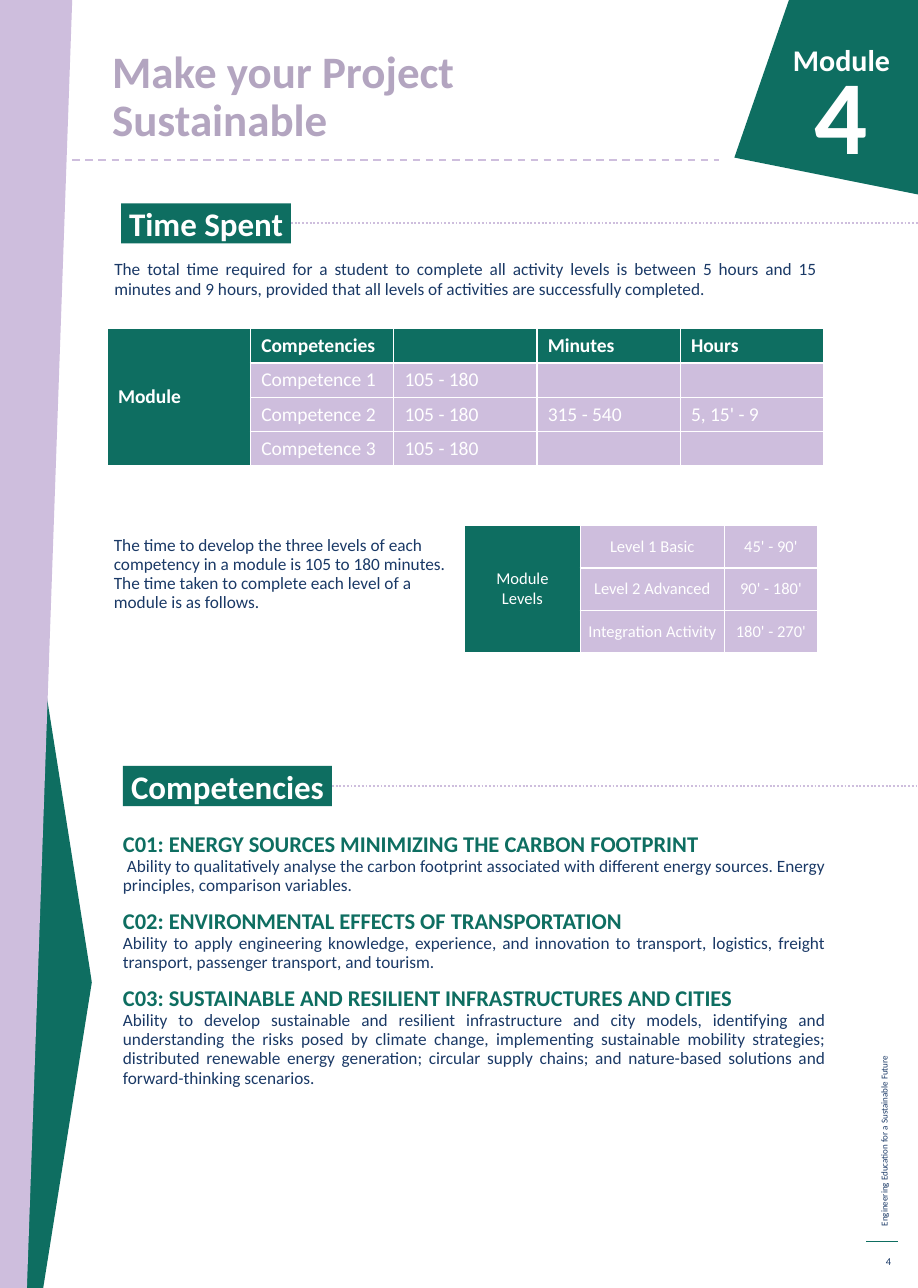
from lxml import etree
from pptx import Presentation
from pptx.dml.color import RGBColor
from pptx.enum.dml import MSO_LINE
from pptx.enum.shapes import MSO_CONNECTOR, MSO_SHAPE
from pptx.enum.text import MSO_ANCHOR, PP_ALIGN
from pptx.oxml.ns import qn
from pptx.util import Pt

GREEN = RGBColor(0x0E, 0x6E, 0x61)
LILAC = RGBColor(0xCE, 0xBE, 0xDD)
MAUVE = RGBColor(0xB3, 0xA5, 0xC0)
NAVY = RGBColor(0x1A, 0x39, 0x66)
WHITE = RGBColor(0xFF, 0xFF, 0xFF)

LEFT, CENTER, RIGHT, JUSTIFY = PP_ALIGN.LEFT, PP_ALIGN.CENTER, PP_ALIGN.RIGHT, PP_ALIGN.JUSTIFY
TOP, MIDDLE, BOTTOM = MSO_ANCHOR.TOP, MSO_ANCHOR.MIDDLE, MSO_ANCHOR.BOTTOM
STRAIGHT, RECTANGLE = MSO_CONNECTOR.STRAIGHT, MSO_SHAPE.RECTANGLE
DASH, DOT, SOLID = MSO_LINE.DASH, MSO_LINE.ROUND_DOT, MSO_LINE.SOLID

FONT = "Calibri"
BODY_SIZE = 11.5
BODY_SPACING = Pt(12.8)
RIGHT_SIDE = 3

COMPETENCIES = [
    ("C01: ENERGY SOURCES MINIMIZING THE CARBON FOOTPRINT",
     " Ability to qualitatively analyse the carbon footprint associated with different "
     "energy sources. Energy principles, comparison variables."),
    ("C02: ENVIRONMENTAL EFFECTS OF TRANSPORTATION",
     "Ability to apply engineering knowledge, experience, and innovation to transport, "
     "logistics, freight transport, passenger transport, and tourism."),
    ("C03: SUSTAINABLE AND RESILIENT INFRASTRUCTURES AND CITIES",
     "Ability to develop sustainable and resilient infrastructure and city models, "
     "identifying and understanding the risks posed by climate change, implementing "
     "sustainable mobility strategies; distributed renewable energy generation; circular "
     "supply chains; and nature-based solutions and forward-thinking scenarios."),
]
TIME_ROWS = [
    ("Module", "Competencies", "", "Minutes", "Hours"),
    ("", "Competence 1", "105 - 180", "", ""),
    ("", "Competence 2", "105 - 180", "315 - 540", "5, 15' - 9"),
    ("", "Competence 3", "105 - 180", "", ""),
]
LEVEL_ROWS = [
    ("Module\nLevels", "Level 1 Basic", "45' - 90'"),
    ("", "Level 2 Advanced", "90' - 180'"),
    ("", "Integration Activity", "180' - 270'"),
]


def style_paragraph(paragraph, size, color, bold=False, align=LEFT, spacing=None):
    paragraph.alignment = align
    if spacing is not None:
        paragraph.line_spacing = spacing
    font = paragraph.font
    font.name, font.size, font.bold = FONT, Pt(size), bold
    font.color.rgb = color


def add_text(slide, box, text, size, color, bold=False, align=LEFT, spacing=None, anchor=TOP):
    shape = slide.shapes.add_textbox(*map(Pt, box))
    frame = shape.text_frame
    frame.word_wrap = True
    frame.vertical_anchor = anchor
    frame.text = text
    style_paragraph(frame.paragraphs[0], size, color, bold, align, spacing)
    return shape


def add_polygon(slide, points, color):
    start, *others = [(Pt(x), Pt(y)) for x, y in points]
    builder = slide.shapes.build_freeform(*start)
    builder.add_line_segments(others, close=True)
    shape = builder.convert_to_shape()
    shape.shadow.inherit = False
    shape.fill.solid()
    shape.fill.fore_color.rgb = color
    shape.line.fill.background()


def add_line(slide, start_x, end_x, y, color, width, dash=SOLID):
    line = slide.shapes.add_connector(STRAIGHT, Pt(start_x), Pt(y), Pt(end_x), Pt(y))
    line.line.color.rgb = color
    line.line.width = Pt(width)
    line.line.dash_style = dash
    etree.SubElement(line._element.spPr, qn("a:effectLst"))
    return line


def add_section_heading(slide, text, left, width, middle):
    height = 26.8
    label = slide.shapes.add_shape(
        RECTANGLE, Pt(left), Pt(middle - height / 2), Pt(width), Pt(height))
    label.shadow.inherit = False
    label.fill.solid()
    label.fill.fore_color.rgb = GREEN
    label.line.fill.background()
    frame = label.text_frame
    frame.margin_left = frame.margin_right = frame.margin_top = frame.margin_bottom = 0
    frame.word_wrap = False
    frame.vertical_anchor = MIDDLE
    frame.text = text
    style_paragraph(frame.paragraphs[0], 22, WHITE, True, CENTER)
    line = add_line(slide, left + width, 612, middle, LILAC, 1.25, DOT)
    line.begin_connect(label, RIGHT_SIDE)


def add_cell_borders(cell):
    properties = cell._tc.get_or_add_tcPr()
    for side in ("a:lnL", "a:lnR", "a:lnT", "a:lnB"):
        border = etree.SubElement(properties, qn(side), w=str(Pt(1)))
        fill = etree.SubElement(border, qn("a:solidFill"))
        etree.SubElement(fill, qn("a:srgbClr"), val=str(WHITE))


def fill_cell(cell, text, size, bold, align, margins, color):
    add_cell_borders(cell)
    cell.fill.solid()
    cell.fill.fore_color.rgb = color
    cell.vertical_anchor = MIDDLE
    cell.margin_left = cell.margin_right = Pt(margins[0])
    cell.margin_top = cell.margin_bottom = Pt(margins[1])
    cell.text = text
    for paragraph in cell.text_frame.paragraphs:
        style_paragraph(paragraph, size, WHITE, bold, align)
        if not text:
            etree.SubElement(paragraph._p, qn("a:endParaRPr"), sz=str(size * 100))


def add_module_table(slide, left, top, widths, row_height, rows, size, align, margins, header):
    frame = slide.shapes.add_table(
        len(rows), len(widths), Pt(left), Pt(top),
        Pt(sum(widths)), Pt(row_height * len(rows)))
    table = frame.table
    table.first_row = table.horz_banding = False
    for column, width in zip(table.columns, widths):
        column.width = Pt(width)
    for row_index, row in enumerate(rows):
        table.rows[row_index].height = Pt(row_height)
        for column_index, text in enumerate(row):
            in_header = header and row_index == 0
            color = GREEN if in_header or column_index == 0 else LILAC
            bold = header and color == GREEN
            fill_cell(table.cell(row_index, column_index), text, size, bold, align, margins, color)
    table.cell(0, 0).merge(table.cell(len(rows) - 1, 0))


def add_competencies(slide):
    frame = add_text(slide, (74.9, 555.1, 482.4, 289.4), "", BODY_SIZE, NAVY).text_frame
    for index, (title, description) in enumerate(COMPETENCIES):
        heading = frame.add_paragraph() if index else frame.paragraphs[0]
        heading.text = title
        style_paragraph(heading, 15, GREEN, True, JUSTIFY, BODY_SPACING)
        if index:
            heading.space_before = BODY_SPACING
        body = frame.add_paragraph()
        body.text = description
        style_paragraph(body, BODY_SIZE, NAVY, False, JUSTIFY, BODY_SPACING)


def add_page_frame(slide):
    margin_text = add_text(slide, (427.7, 655.9, 323.3, 14.4),
                           "Engineering Education for a Sustainable Future", 6, NAVY)
    margin_text.rotation = 270
    add_line(slide, 577.4, 599, 828, GREEN, 0.75)
    add_text(slide, (577.4, 830.9, 23.8, 20.9), "4", 7, NAVY, align=RIGHT, anchor=MIDDLE)
    add_polygon(slide, [(28.8, 858.96), (16.6, 858.96), (16.6, 372.2),
                        (59.8, 645.8), (61.2, 655.2)], GREEN)
    add_polygon(slide, [(0, 0), (48.2, 0), (18, 858.96), (0, 858.96)], LILAC)


def add_module_header(slide):
    add_polygon(slide, [(612, 0), (526, 0), (489.6, 105.1), (612, 129.7)], GREEN)
    add_text(slide, (67.7, 29, 285.1, 72.3), "Make your Project Sustainable", 30, MAUVE,
             True, spacing=0.89, anchor=BOTTOM)
    add_line(slide, 48.2, 479.5, 106.6, LILAC, 1.25, DASH)
    add_text(slide, (470.9, 23.8, 129.6, 102.2), "Module", 20, WHITE, True, RIGHT)
    add_text(slide, (455.8, 29.5, 129.6, 102.2), "4", 70, WHITE, True, RIGHT)


def main():
    presentation = Presentation()
    presentation.slide_width = Pt(612)
    presentation.slide_height = Pt(858.96)
    slide = presentation.slides.add_slide(presentation.slide_layouts[6])
    add_page_frame(slide)
    add_module_header(slide)
    add_section_heading(slide, "Time Spent", 80.7, 113.3, 149)
    add_text(slide, (69.1, 169.9, 482.4, 37.4),
             "The total time required for a student to complete all activity levels is between "
             "5 hours and 15 minutes and 9 hours, provided that all levels of activities are "
             "successfully completed.", BODY_SIZE, NAVY, align=JUSTIFY, spacing=BODY_SPACING)
    add_module_table(slide, 71.5, 219.2, [95.5] * 5, 22.8, TIME_ROWS, 13, LEFT, (7.2, 3.6), True)
    add_text(slide, (68.8, 353.5, 241.2, 85),
             "The time to develop the three levels of each competency in a module is 105 to 180 "
             "minutes. The time taken to complete each level of a module is as follows.",
             BODY_SIZE, NAVY, spacing=BODY_SPACING)
    add_module_table(slide, 309.8, 350.6, [77, 96.2, 62], 28.2, LEVEL_ROWS, 11, CENTER,
                     (0.7, 0.7), False)
    add_section_heading(slide, "Competencies", 82, 139.3, 524.2)
    add_competencies(slide)
    presentation.save("out.pptx")


if __name__ == "__main__":
    main()
